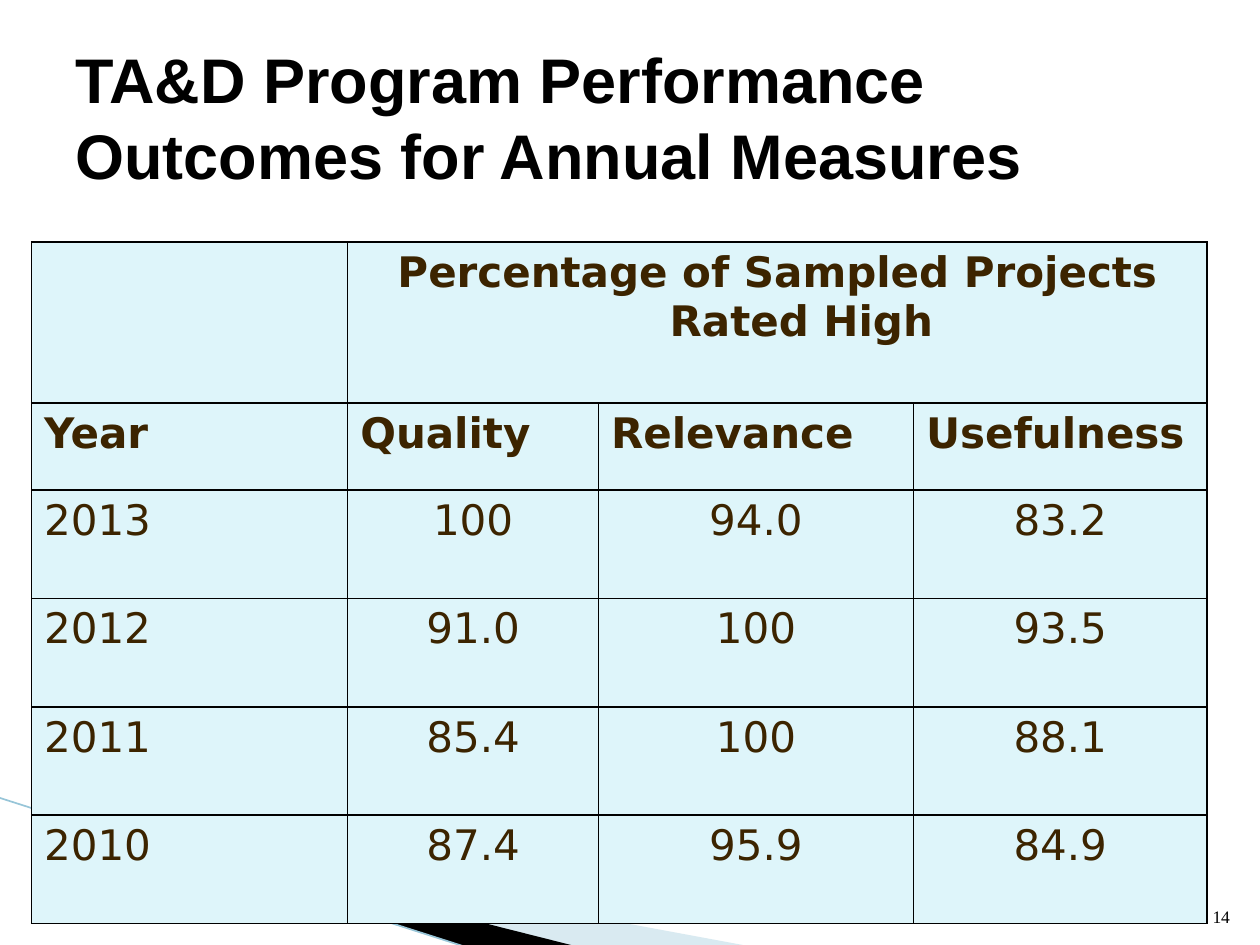
from lxml import etree
from pptx import Presentation
from pptx.dml.color import RGBColor
from pptx.enum.shapes import MSO_CONNECTOR as Connector
from pptx.enum.text import MSO_ANCHOR as Anchor, PP_ALIGN as Align
from pptx.oxml.ns import qn
from pptx.util import Inches, Pt

YEARLY_RATINGS = [
    ("2013", "100", "94.0", "83.2"),
    ("2012", "91.0", "100", "93.5"),
    ("2011", "85.4", "100", "88.1"),
    ("2010", "87.4", "95.9", "84.9"),
]
MEASURES = ("Year", "Quality", "Relevance", "Usefulness")


def color(value):
    return RGBColor.from_string(value)


def write(frame, text, *, size, font, fill="000000", bold=False, align=Align.LEFT, hanging=0):
    frame.word_wrap = True
    paragraph = frame.paragraphs[0]
    paragraph.alignment = align
    if hanging:
        properties = paragraph._p.get_or_add_pPr()
        properties.set("marL", str(Inches(hanging)))
        properties.set("indent", str(-Inches(hanging)))
    run = paragraph.add_run()
    run.text = text
    run.font.size = Pt(size)
    run.font.name = font
    run.font.bold = bold
    run.font.color.rgb = color(fill)
    return paragraph


class SlideBuilder:
    title_font = "Arial"
    table_font = "DejaVu Sans"
    number_font = "Times New Roman"
    table_text = "3C2400"
    table_fill = "DEF5FA"
    border = "000000"

    def __init__(self, presentation):
        self.slide = presentation.slides.add_slide(presentation.slide_layouts[5])

    def title(self, text, left, top, width, height):
        title = self.slide.shapes.title
        title.left, title.top = Inches(left), Inches(top)
        title.width, title.height = Inches(width), Inches(height)
        title.text_frame.vertical_anchor = Anchor.MIDDLE
        write(title.text_frame, text, size=36, font=self.title_font, bold=True)

    def wedge(self, points, fill, opacity=100):
        start, *others = [(Inches(x), Inches(y)) for x, y in points]
        builder = self.slide.shapes.build_freeform(*start)
        builder.add_line_segments(others)
        shape = builder.convert_to_shape()
        shape.shadow.inherit = False
        shape.line.fill.background()
        shape.fill.solid()
        shape.fill.fore_color.rgb = color(fill)
        if opacity < 100:
            tone = shape._element.spPr.find(".//" + qn("a:srgbClr"))
            etree.SubElement(tone, qn("a:alpha"), val=str(opacity * 1000))

    def line(self, start, end, stroke, width):
        points = [Inches(value) for value in (*start, *end)]
        connector = self.slide.shapes.add_connector(Connector.STRAIGHT, *points)
        connector.line.color.rgb = color(stroke)
        connector.line.width = Pt(width)
        etree.SubElement(connector._element.spPr, qn("a:effectLst"))

    def slide_number(self, text, left, top, width, height):
        box = self.slide.shapes.add_textbox(*map(Inches, (left, top, width, height)))
        box.text_frame.vertical_anchor = Anchor.BOTTOM
        write(box.text_frame, text, size=10, font=self.number_font, align=Align.RIGHT)

    def table(self, left, top, widths, heights):
        frame = self.slide.shapes.add_table(
            len(heights), len(widths), Inches(left), Inches(top),
            Inches(sum(widths)), Inches(sum(heights)))
        table = frame.table
        for column, width in zip(table.columns, widths):
            column.width = Inches(width)
        for row, height in zip(table.rows, heights):
            row.height = Inches(height)
        for cell in table.iter_cells():
            self.style_cell(cell)
        return table

    def style_cell(self, cell):
        properties = cell._tc.get_or_add_tcPr()
        for side in ("lnL", "lnR", "lnT", "lnB"):
            edge = etree.SubElement(properties, qn(f"a:{side}"), w=str(Pt(1)))
            solid = etree.SubElement(edge, qn("a:solidFill"))
            etree.SubElement(solid, qn("a:srgbClr"), val=self.border)
        cell.fill.solid()
        cell.fill.fore_color.rgb = color(self.table_fill)

    def cell_text(self, cell, text, bold=False, align=Align.LEFT):
        write(cell.text_frame, text, size=24, font=self.table_font,
              fill=self.table_text, bold=bold, align=align, hanging=0.38)


def main():
    presentation = Presentation()
    presentation.slide_width, presentation.slide_height = Inches(10), Inches(7.5)
    builder = SlideBuilder(presentation)

    builder.wedge([(0.55, 6.51), (5.95, 7.51), (4.56, 7.51), (0.55, 6.5)], "A0CBDC", 40)
    builder.wedge([(0.53, 6.49), (4.57, 7.51), (3.72, 7.52), (0.54, 6.5)], "000000")
    builder.line((-0.01, 6.33), (3.71, 7.52), "97C5D8", 0.95)
    builder.slide_number("14", 9.46, 7.01, 0.4, 0.4)
    builder.title("TA&D Program Performance Outcomes for Annual Measures", 0.5, 0.3, 9, 1.25)

    table = builder.table(0.25, 1.92, [2.51, 1.99, 2.5, 2.33], [1.28, 0.69] + [0.86] * 4)
    heading = table.cell(0, 1)
    heading.merge(table.cell(0, 3))
    builder.cell_text(heading, "Percentage of Sampled Projects Rated High", True, Align.CENTER)
    for column, measure in enumerate(MEASURES):
        builder.cell_text(table.cell(1, column), measure, bold=True)
    for row, ratings in enumerate(YEARLY_RATINGS, start=2):
        for column, value in enumerate(ratings):
            align = Align.CENTER if column else Align.LEFT
            builder.cell_text(table.cell(row, column), value, align=align)

    presentation.save("out.pptx")


if __name__ == "__main__":
    main()
